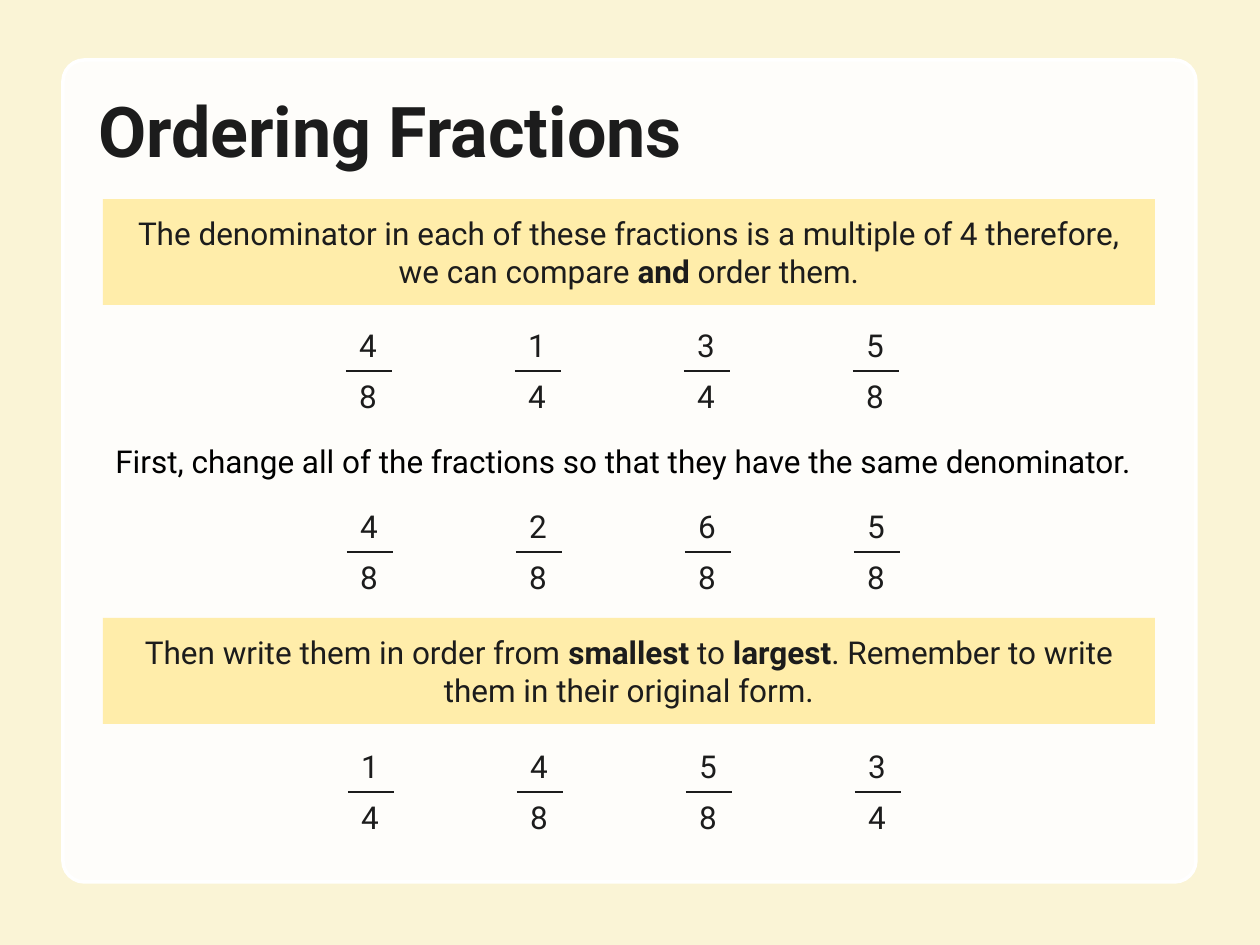
"""Build the Ordering Fractions slide."""
import lxml.etree
import pptx
import pptx.dml.color
import pptx.enum.shapes
import pptx.enum.text
import pptx.oxml.ns
import pptx.util

SCALE = 914400 / 126
THEME = {
    "font": "Roboto",
    "title_size": 40,
    "body_size": 18,
    "page": "FAF4D6",
    "card": "FFFFFF",
    "banner": "FFEDAA",
    "ink": "1C1C1C",
    "black": "000000",
}
ALIGN = pptx.enum.text.PP_ALIGN
ANCHOR = pptx.enum.text.MSO_ANCHOR
SHAPE = pptx.enum.shapes.MSO_SHAPE
RGB = pptx.dml.color.RGBColor.from_string
qn = pptx.oxml.ns.qn


def px(*lengths):
    return [pptx.util.Emu(round(length * SCALE)) for length in lengths]


def write(box, text, align=ALIGN.CENTER, size="body_size", color="ink", inset=None,
          anchor=ANCHOR.TOP):
    frame = box.text_frame
    frame.word_wrap = True
    frame.vertical_anchor = anchor
    if inset is not None:
        frame.margin_left, frame.margin_top, frame.margin_right, frame.margin_bottom = px(*[inset] * 4)
    para = frame.paragraphs[0]
    para.alignment = align
    para.font.name = THEME["font"]
    para.font.size = pptx.util.Pt(THEME[size])
    para.font.color.rgb = RGB(THEME[color])
    for index, part in enumerate(text.split("*")):
        span = para.add_run()
        span.text = part
        if index % 2:
            span.font.bold = True
    return para


deck = pptx.Presentation()
deck.slide_width, deck.slide_height = px(1260, 945)
page = deck.slides.add_slide(deck.slide_layouts[5])
page.background.fill.solid()
page.background.fill.fore_color.rgb = RGB(THEME["page"])

card = page.shapes.add_shape(SHAPE.ROUNDED_RECTANGLE, *px(63, 60, 1133, 822))
card.adjustments[0] = 0.026
card.shadow.inherit = False
card.fill.solid()
card.fill.fore_color.rgb = RGB(THEME["card"])
card_color = card.fill._xPr.find(qn("a:solidFill"))[0]
lxml.etree.SubElement(card_color, qn("a:alpha"), val="90000")
card.line.color.rgb = RGB(THEME["card"])
card.line.width = pptx.util.Pt(2)

title = page.shapes.title
card._element.addnext(title._element)
title.left, title.top, title.width, title.height = px(63, 66, 1133, 137)
heading = write(title, "Ordering Fractions", ALIGN.LEFT, "title_size", inset=35,
                anchor=ANCHOR.MIDDLE)
heading.font.bold = True
heading.line_spacing = 0.9
title.text_frame.auto_size = pptx.enum.text.MSO_AUTO_SIZE.NONE

banners = [
    (199, "The denominator in each of these fractions is a multiple of 4 therefore, "
          "we can compare *and* order them."),
    (618, "Then write them in order from *smallest* to *largest*. "
          "Remember to write them in their original form."),
]
for top, text in banners:
    banner = page.shapes.add_shape(SHAPE.RECTANGLE, *px(103, top, 1052, 106))
    banner.shadow.inherit = False
    banner.fill.solid()
    banner.fill.fore_color.rgb = RGB(THEME["banner"])
    banner.line.fill.background()
    write(banner, text, inset=15, anchor=ANCHOR.MIDDLE)

instruction = page.shapes.add_textbox(*px(103, 436, 1067, 51))
write(instruction, "First, change all of the fractions so that they have the same denominator.",
      ALIGN.LEFT, color="black")

fraction_rows = [
    (345, 320, ["4/8", "1/4", "3/4", "5/8"]),
    (346, 501, ["4/8", "2/8", "6/8", "5/8"]),
    (347, 741, ["1/4", "4/8", "5/8", "3/4"]),
]
COLUMN_STEP, DIGIT_WIDTH, DIGIT_HEIGHT = 169, 46, 51
for row_left, top, fractions in fraction_rows:
    for column, fraction in enumerate(fractions):
        left = row_left + column * COLUMN_STEP
        middle = top + DIGIT_HEIGHT
        group = page.shapes.add_group_shape()
        for digit_top, digit in zip((top, middle), fraction.split("/")):
            box = group.shapes.add_textbox(*px(left, digit_top, DIGIT_WIDTH, DIGIT_HEIGHT))
            write(box, digit)
        bar = group.shapes.add_connector(
            pptx.enum.shapes.MSO_CONNECTOR.STRAIGHT,
            *px(left + 1, middle, left + 1 + DIGIT_WIDTH, middle))
        bar.line.color.rgb = RGB(THEME["ink"])
        bar.line.width = pptx.util.Pt(1)
        lxml.etree.SubElement(bar._element.spPr, qn("a:effectLst"))

deck.save("out.pptx")
